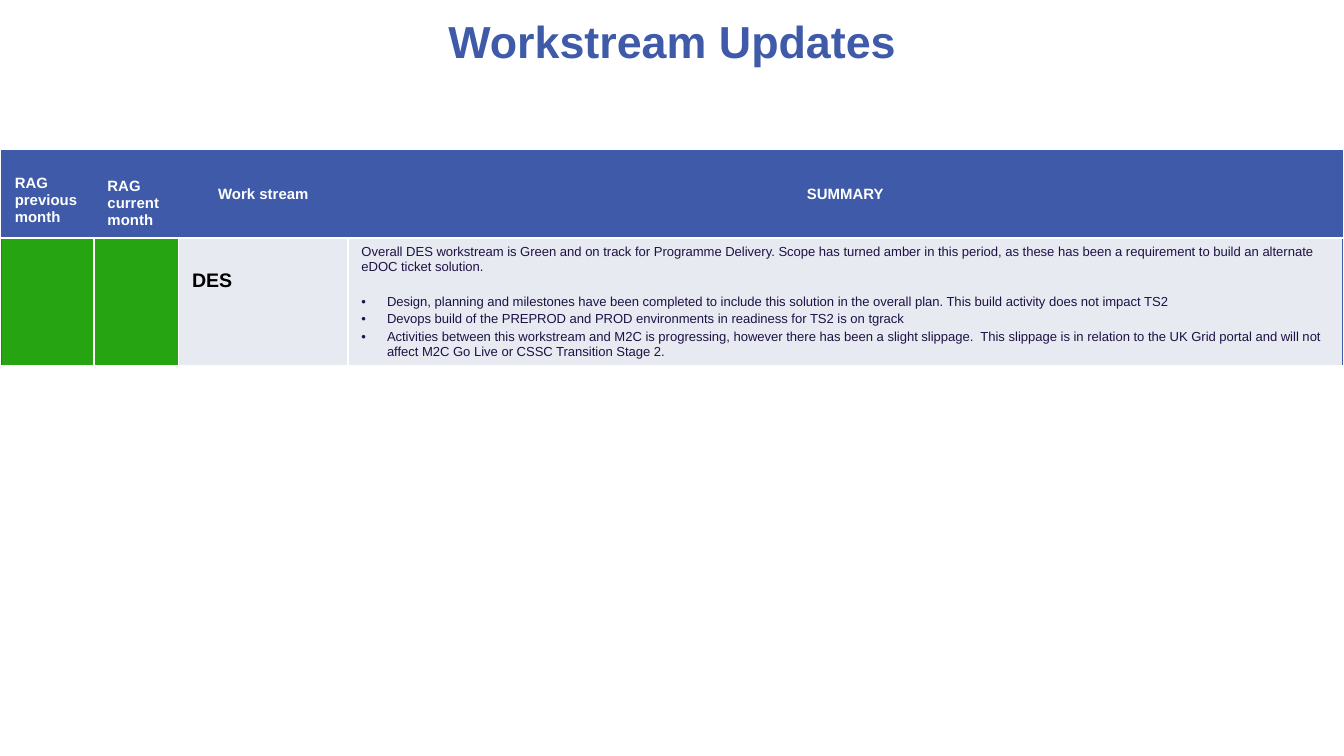
from lxml import etree
from pptx import Presentation
from pptx.dml.color import RGBColor
from pptx.enum import text
from pptx.oxml import ns
from pptx.util import Inches, Pt

BLUE, WHITE, GREEN, PALE, INK, BLACK = (
    "3E5AA8", "FFFFFF", "26A412", "E8EAF1", "1E1246", "000000")

TITLE = "Workstream Updates"
COLUMNS = [0.69, 0.63, 1.26, 7.4]
ROWS = [0.65, 0.95]
# Lines, top margin, vertical anchor, alignment
TOP, MIDDLE = text.MSO_ANCHOR.TOP, text.MSO_ANCHOR.MIDDLE
LEFT, CENTER = text.PP_ALIGN.LEFT, text.PP_ALIGN.CENTER
HEADERS = [
    (["RAG previous month"], 0.18, TOP, LEFT),
    (["RAG", "current", "month"], 0.18, MIDDLE, LEFT),
    (["Work stream"], 0.05, MIDDLE, CENTER),
    (["SUMMARY"], 0.05, MIDDLE, CENTER),
]
BODY_FILLS = [GREEN, GREEN, PALE, PALE]
WORKSTREAM = "DES"
OVERVIEW = ("Overall DES workstream is Green and on track for Programme Delivery. "
            "Scope has turned amber in this period, as these has been a requirement "
            "to build an alternate eDOC ticket solution.")
BULLETS = [
    "Design, planning and milestones have been completed to include this solution "
    "in the overall plan. This build activity does not impact TS2",
    "Devops build of the PREPROD and PROD environments in readiness for TS2 is on tgrack",
    "Activities between this workstream and M2C is progressing, however there has been "
    "a slight slippage.  This slippage is in relation to the UK Grid portal and will not "
    "affect M2C Go Live or CSSC Transition Stage 2.",
]


def rgb(value):
    return RGBColor.from_string(value)


def add_span(para, words, size, color, bold=False):
    span = para.add_run()
    span.text = words
    span.font.name = "Arial"
    span.font.size = Pt(size)
    span.font.bold = bold
    span.font.color.rgb = rgb(color)


def next_para(frame, index):
    return frame.paragraphs[0] if index == 0 else frame.add_paragraph()


def set_borders(cell, left, right, top, bottom):
    """Draw blue edges at half a point and white ones at one point."""
    props = cell._tc.get_or_add_tcPr()
    for side, color in zip("LRTB", (left, right, top, bottom)):
        width = Pt(0.5 if color == BLUE else 1)
        line = etree.SubElement(props, ns.qn(f"a:ln{side}"), w=str(width))
        fill = etree.SubElement(line, ns.qn("a:solidFill"))
        etree.SubElement(fill, ns.qn("a:srgbClr"), val=color)


def set_fill(cell, color):
    cell.fill.solid()
    cell.fill.fore_color.rgb = rgb(color)


def add_bullet(para):
    props = para._p.get_or_add_pPr()
    props.set("marL", str(Inches(0.19)))
    props.set("indent", str(Inches(-0.19)))
    etree.SubElement(props, ns.qn("a:buFont"), typeface="Arial")
    etree.SubElement(props, ns.qn("a:buChar"), char="•")


deck = Presentation()
deck.slide_width = Inches(10)
deck.slide_height = deck.slide_width * 9 // 16
page = deck.slides.add_slide(deck.slide_layouts[5])

title = page.shapes.title
title.left, title.top, title.width, title.height = map(Inches, (0.5, 0, 9, 0.61))
title.text_frame.vertical_anchor = MIDDLE
heading = title.text_frame.paragraphs[0]
heading.alignment = CENTER
add_span(heading, TITLE, 24, BLUE, True)

table = page.shapes.add_table(
    len(ROWS), len(COLUMNS), Inches(0.01), Inches(1.12),
    Inches(sum(COLUMNS)), Inches(sum(ROWS))).table
table.horz_banding = False
for column, width in zip(table.columns, COLUMNS):
    column.width = Inches(width)
for row, height in zip(table.rows, ROWS):
    row.height = Inches(height)

for col, (lines, margin, anchor, align) in enumerate(HEADERS):
    cell = table.cell(0, col)
    set_borders(cell, BLUE, BLUE, BLUE, WHITE)
    set_fill(cell, BLUE)
    cell.margin_top = Inches(margin)
    cell.vertical_anchor = anchor
    for index, words in enumerate(lines):
        para = next_para(cell.text_frame, index)
        para.alignment = align
        add_span(para, words, 8, WHITE, True)

last = len(COLUMNS) - 1
for col, color in enumerate(BODY_FILLS):
    cell = table.cell(1, col)
    set_borders(cell, BLUE if col == 0 else WHITE,
                BLUE if col == last else WHITE, WHITE, WHITE)
    set_fill(cell, color)

name_cell = table.cell(1, 2)
name_cell.margin_top = Inches(0.24)
add_span(name_cell.text_frame.paragraphs[0], WORKSTREAM, 10.5, BLACK, True)

summary = table.cell(1, 3).text_frame
for index, words in enumerate([OVERVIEW, *BULLETS]):
    para = next_para(summary, index)
    if index > 0:
        add_bullet(para)
        para.space_before = Pt(10.4 if index == 1 else 0.8)
    para.space_after = Pt(0.8)
    add_span(para, words, 7, INK)

deck.save("out.pptx")
